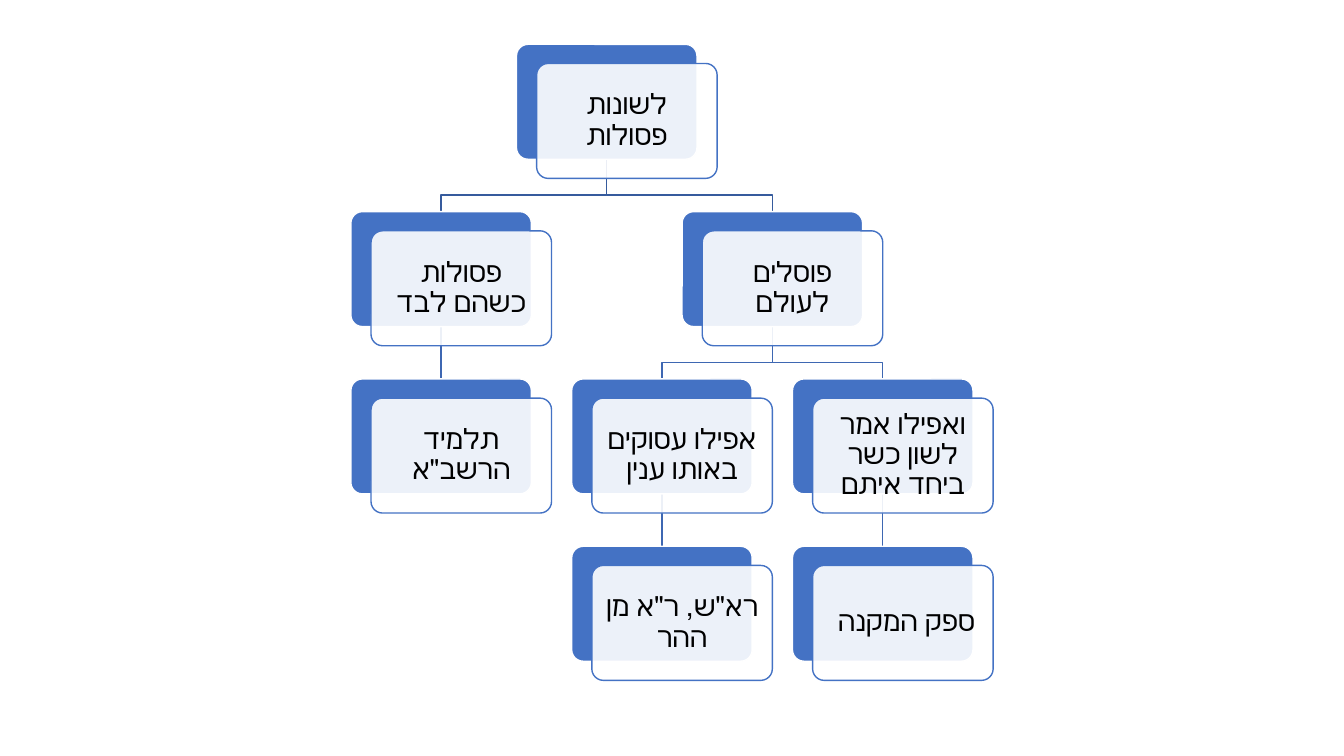
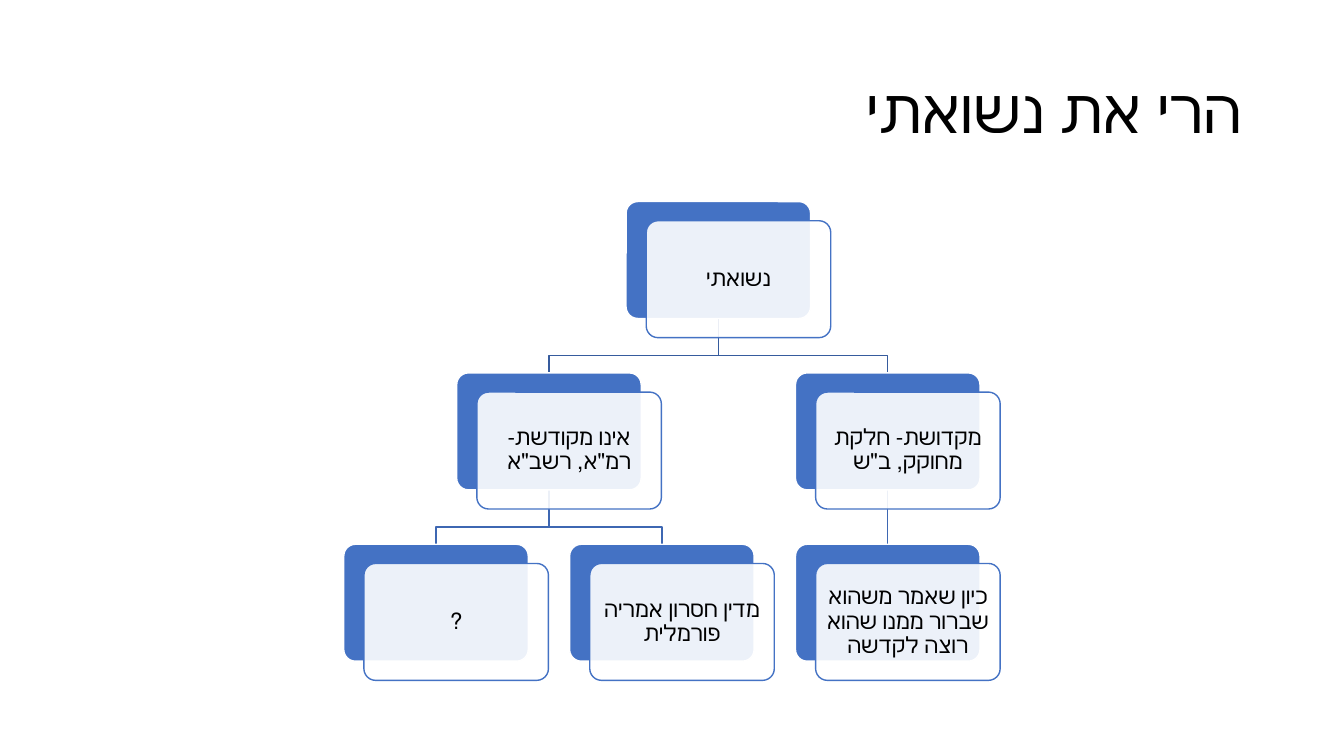
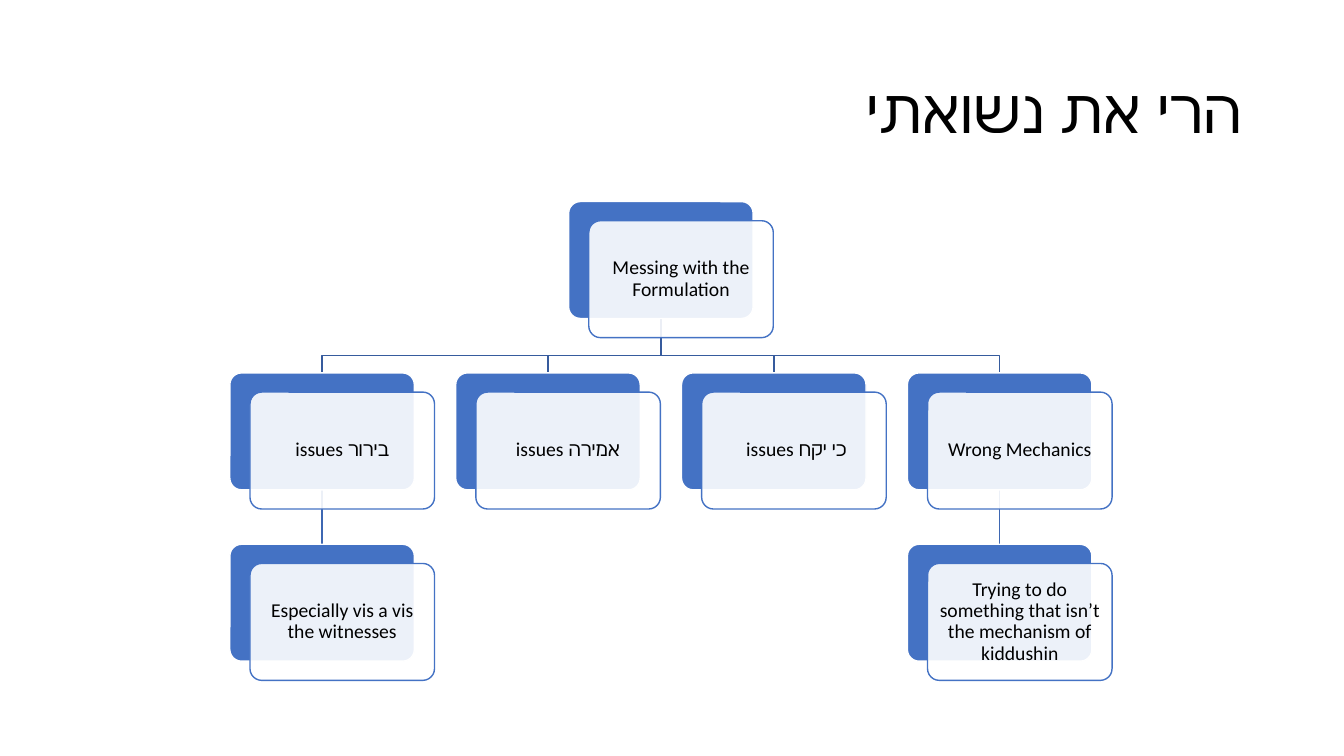
import itertools
import pptx
import pptx.util
import pptx.dml.color
import pptx.enum.shapes
import pptx.enum.text
import pptx.oxml.ns
import lxml.etree

Inches, Pt = pptx.util.Inches, pptx.util.Pt
ALIGN = pptx.enum.text.PP_ALIGN
MIDDLE = pptx.enum.text.MSO_ANCHOR.MIDDLE
ROUND = pptx.enum.shapes.MSO_SHAPE.ROUNDED_RECTANGLE
STRAIGHT = pptx.enum.shapes.MSO_CONNECTOR.STRAIGHT
qn = pptx.oxml.ns.qn

FONT, BLACK, WHITE, BLUE = "Calibri", "000000", "FFFFFF", "4472C4"
TOP_LINK, LOW_LINK = "365B9D", "3E67B2"
SHIFT_X, SHIFT_Y = 0.2, 0.19
BEND = 0.68

# Each node is (text, children), children from left to right.
INVALID = ("לשונות פסולות", [
    ("פסולות כשהם לבד", [("תלמיד הרשב\"א", [])]),
    ("פוסלים לעולם", [
        ("אפילו עסוקים באותו ענין", [("רא\"ש, ר\"א מן ההר", [])]),
        ("ואפילו אמר לשון כשר ביחד איתם", [("ספק המקנה ", [])]),
    ]),
])
MARRIED = ("נשואתי", [
    ("אינו מקודשת- רמ\"א, רשב\"א", [
        ("?", []),
        ("מדין חסרון אמריה פורמלית", []),
    ]),
    ("מקדושת- חלקת מחוקק, ב\"ש", [
        ("כיון שאמר משהוא שברור ממנו שהוא רוצה לקדשה", []),
    ]),
])
FORMULA = ("Messing with the Formulation", [
    ("בירור issues", [("Especially vis a vis the witnesses", [])]),
    ("אמירה issues", []),
    ("כי יקח issues ", []),
    ("Wrong Mechanics", [
        ("Trying to do something that isn’t the mechanism of kiddushin", []),
    ]),
])


def paint(target, color):
    """Give a fill, line or font a solid colour."""
    if hasattr(target, "solid"):
        target.solid()
        target.fore_color.rgb = pptx.dml.color.RGBColor.from_string(color)
    elif hasattr(target, "fill"):
        paint(target.fill, color)
    else:
        target.color.rgb = pptx.dml.color.RGBColor.from_string(color)


def stroke(shape, color):
    paint(shape.line, color)
    shape.line.width = Pt(1)


def write(frame, text, size, align):
    """Write one right-to-left paragraph."""
    frame.word_wrap = True
    frame.vertical_anchor = MIDDLE
    para = frame.paragraphs[0]
    para.alignment = align
    para.line_spacing = 0.9
    para._p.get_or_add_pPr().set("rtl", "1")
    run = para.add_run()
    run.text = text
    run.font.name, run.font.size = FONT, Pt(size)
    paint(run.font, BLACK)


def plate(group, box, fill, line):
    shape = group.shapes.add_shape(ROUND, *map(Inches, box))
    shape.adjustments[0] = 0.1
    shape.shadow.inherit = False
    paint(shape.fill, fill)
    stroke(shape, line)
    return shape


def card(group, box, text, size, inset):
    """Draw a blue plate under a shifted, see-through text plate."""
    x, y, w, h = box
    back = plate(group, box, BLUE, WHITE)
    front = plate(group, (x + SHIFT_X, y + SHIFT_Y, w, h), WHITE, BLUE)
    tint = front.fill._xPr.find(qn("a:solidFill"))[0]
    lxml.etree.SubElement(tint, qn("a:alpha"), val="90000")
    frame = front.text_frame
    frame.margin_left = frame.margin_right = Inches(inset)
    frame.margin_top = frame.margin_bottom = Inches(inset)
    write(frame, text, size, ALIGN.CENTER)
    return back


def link(group, upper, lower, color):
    """Join two plates, straight down or with a bend."""
    x1, y1 = upper.left + upper.width // 2, upper.top + upper.height
    x2, y2 = lower.left + lower.width // 2, lower.top
    if abs(x1 - x2) < Inches(0.01):
        line = group.shapes.add_connector(STRAIGHT, x1, y1, x2, y2)
        line.begin_connect(upper, 2)
        line.end_connect(lower, 0)
        stroke(line, color)
        lxml.etree.SubElement(line._element.spPr, qn("a:effectLst"))
        return
    bend = int(y1 + BEND * (y2 - y1))
    pen = group.shapes.build_freeform(x1, y1)
    pen.add_line_segments([(x1, bend), (x2, bend), (x2, y2)], close=False)
    line = pen.convert_to_shape()
    line.fill.background()
    line.shadow.inherit = False
    stroke(line, color)


def chart(slide, root, box, step, size, inset):
    """Draw a tree; box is the leftmost plate of the top row."""
    left, top, w, h = box
    links = slide.shapes.add_group_shape()
    cards = slide.shapes.add_group_shape()
    slots = itertools.count()

    def grow(node, depth):
        text, kids = node
        grown = [grow(kid, depth + 1) for kid in kids]
        if grown:
            x = (grown[0][0] + grown[-1][0]) / 2
        else:
            x = left + next(slots) * step[0]
        back = card(cards, (x, top + depth * step[1], w, h),
                    text, size, inset)
        for _, lower in grown:
            link(links, back, lower, LOW_LINK if depth else TOP_LINK)
        return x, back

    grow(root, 0)


def head(slide, text):
    title = slide.shapes.title
    title.left, title.top = Inches(0.92), Inches(0.4)
    title.width, title.height = Inches(11.5), Inches(1.45)
    write(title.text_frame, text, 44, ALIGN.RIGHT)


def main():
    deck = pptx.Presentation()
    deck.slide_width, deck.slide_height = Inches(13.33), Inches(7.5)
    titled, blank = deck.slide_layouts[5], deck.slide_layouts[6]

    slide = deck.slides.add_slide(blank)
    chart(slide, INVALID, (3.48, 0.44, 1.79, 1.14), (2.19, 1.66), 20, 0.08)

    for root, left, size, inset in ((MARRIED, 3.41, 16, 0.07),
                                    (FORMULA, 2.28, 14, 0.06)):
        slide = deck.slides.add_slide(titled)
        head(slide, "הרי את נשואתי")
        chart(slide, root, (left, 2, 1.83, 1.16), (2.24, 1.7), size, inset)

    deck.save("out.pptx")


if __name__ == "__main__":
    main()
